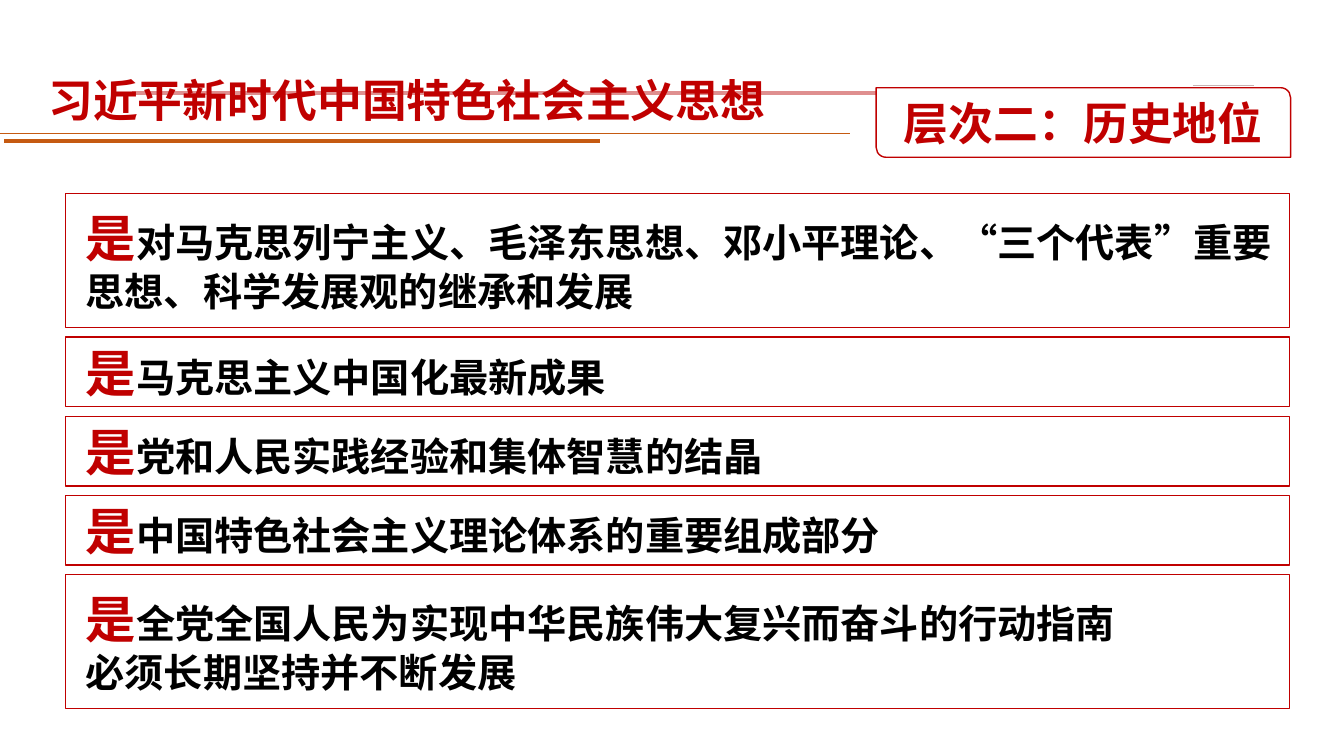
from lxml import etree
from pptx import Presentation
from pptx.dml.color import RGBColor
from pptx.enum.shapes import MSO_CONNECTOR, MSO_SHAPE as Shape
from pptx.enum.text import MSO_ANCHOR, PP_ALIGN
from pptx.oxml.ns import qn
from pptx.util import Inches, Pt

FONT = "Noto Sans CJK SC"
COLORS = {name: RGBColor.from_string(value) for name, value in {
    "red": "C00000", "faded": "DF8F8F", "pale": "C8B4B4",
    "orange": "C55A11", "black": "000000", "white": "FFFFFF"}.items()}

deck = Presentation()
deck.slide_width, deck.slide_height = Inches(13.33), Inches(7.5)
slide = deck.slides.add_slide(deck.slide_layouts[6])


def add_words(paragraph, words, size, color):
    run = paragraph.add_run()
    run.text = words
    font = run.font
    font.name, font.size, font.bold = FONT, Pt(size), True
    font.color.rgb = COLORS[color]
    etree.SubElement(font._element, qn("a:ea"), typeface=FONT)


def add_panel(kind, left, top, width, height):
    """Add a white panel with a thin red outline."""
    panel = slide.shapes.add_shape(
        kind, Inches(left), Inches(top), Inches(width), Inches(height))
    panel.shadow.inherit = False
    panel.fill.solid()
    panel.fill.fore_color.rgb = COLORS["white"]
    panel.line.color.rgb = COLORS["red"]
    panel.line.width = Pt(1)
    panel.text_frame.word_wrap = True
    panel.text_frame.vertical_anchor = MSO_ANCHOR.MIDDLE
    return panel


# Header rules: start, end, height on the slide, weight, colour
for start, end, y, weight, color in [
        (1.31, 12.14, 0.92, 3, "faded"),
        (11.83, 12.44, 0.85, 0.5, "pale"),
        (0.04, 5.95, 1.4, 3, "orange"),
        (0, 8.43, 1.32, 0.5, "orange")]:
    rule = slide.shapes.add_connector(
        MSO_CONNECTOR.STRAIGHT, Inches(start), Inches(y), Inches(end), Inches(y))
    rule.line.color.rgb = COLORS[color]
    rule.line.width = Pt(weight)
    etree.SubElement(rule._element.spPr, qn("a:effectLst"))

title = slide.shapes.add_textbox(
    Inches(0.38), Inches(0.72), Inches(7.68), Inches(0.6)).text_frame
title.word_wrap = True
title.vertical_anchor = MSO_ANCHOR.MIDDLE
title.paragraphs[0].line_spacing = 0.9
add_words(title.paragraphs[0], "习近平新时代中国特色社会主义思想", 32, "red")

badge = add_panel(Shape.ROUND_2_DIAG_RECTANGLE, 8.69, 0.87, 4.11, 0.69)
badge.adjustments[0], badge.adjustments[1] = 0, 0.142
badge_line = badge.text_frame.paragraphs[0]
badge_line.alignment = PP_ALIGN.CENTER
add_words(badge_line, "层次二：历史地位", 32, "red")

# Stacked statements, each opening with a large red 是
ONE_LINE, TWO_LINES, GAP = 0.69, 1.33, 0.095
statements = [
    (TWO_LINES, ["对马克思列宁主义、毛泽东思想、邓小平理论、“三个代表”重要思想、科学发展观的继承和发展"]),
    (ONE_LINE, ["马克思主义中国化最新成果"]),
    (ONE_LINE, ["党和人民实践经验和集体智慧的结晶"]),
    (ONE_LINE, ["中国特色社会主义理论体系的重要组成部分"]),
    (TWO_LINES, ["全党全国人民为实现中华民族伟大复兴而奋斗的行动指南",
                 "必须长期坚持并不断发展"]),
]
top = 1.92
for height, lines in statements:
    frame = add_panel(Shape.RECTANGLE, 0.65, top, 12.14, height).text_frame
    frame.margin_left = Inches(0.2)
    for index, words in enumerate(lines):
        paragraph = frame.add_paragraph() if index else frame.paragraphs[0]
        paragraph.alignment = PP_ALIGN.LEFT
        if index == 0:
            add_words(paragraph, "是", 36, "red")
        add_words(paragraph, words, 28, "black")
    top += height + GAP

deck.save("out.pptx")
